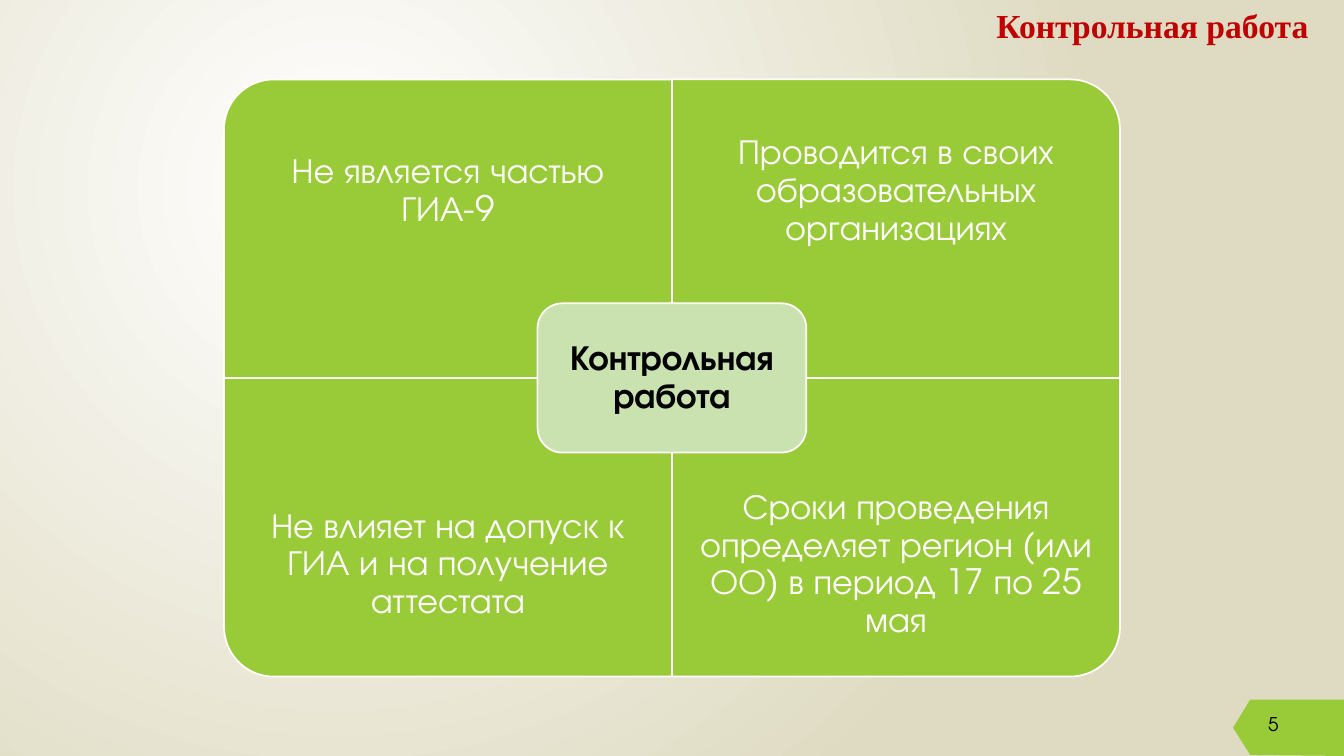
from lxml.etree import SubElement
from pptx import Presentation
from pptx.dml.color import RGBColor
from pptx.enum.shapes import MSO_SHAPE
from pptx.enum.text import MSO_ANCHOR, MSO_AUTO_SIZE, PP_ALIGN
from pptx.oxml.ns import qn
from pptx.util import Inches, Pt

GREEN = RGBColor(0x99, 0xCB, 0x38)
PALE = RGBColor(0xCA, 0xE2, 0xAF)
WHITE = RGBColor(0xFF, 0xFF, 0xFF)
BLACK = RGBColor(0, 0, 0)
RED = RGBColor(0xC0, 0, 0)
SAND = RGBColor(0xDF, 0xDB, 0xC2)

# Slide size and the two-by-two grid centred on it
WIDE, HIGH = Inches(13.33), Inches(7.5)
COL = WIDE / 3
ROW = COL * 2 / 3
LEFT, TOP = WIDE / 2 - COL, HIGH / 2 - ROW

SANS = "TeX Gyre Adventor"
BODY = {"name": SANS, "size": Pt(25), "bold": False}
HUB = {"name": SANS, "size": Pt(25), "bold": True}
HEAD = {"name": "Times New Roman", "size": Pt(24), "bold": True}
PAGE = {"name": SANS, "size": Pt(13.5), "bold": False}

# Text, column, row, turn that puts the round corner outside
TILES = [
    ("Не является частью ГИА-9", 0, 0, 270),
    ("Проводится в своих образовательных организациях", 1, 0, 0),
    ("Не влияет на допуск к ГИА и на получение аттестата", 0, 1, 180),
    ("Сроки проведения определяет регион (или ОО) в период 17 по 25 мая", 1, 1, 90),
]


def place(item, x, y, w, h):
    spots = {"left": x, "top": y, "width": w, "height": h}
    for name, value in spots.items():
        setattr(item, name, int(value))


def write(item, text, style, color, inset=None, align=PP_ALIGN.CENTER,
          anchor=MSO_ANCHOR.MIDDLE, pitch=0.9):
    frame = item.text_frame
    form = {"word_wrap": True, "auto_size": MSO_AUTO_SIZE.NONE,
            "vertical_anchor": anchor}
    if inset is not None:
        for side in ("left", "top", "right", "bottom"):
            form["margin_" + side] = Inches(inset)
    for name, value in form.items():
        setattr(frame, name, value)
    frame.text = text
    line = frame.paragraphs[0]
    line.alignment, line.line_spacing = align, pitch
    font = line.runs[0].font
    for name, value in style.items():
        setattr(font, name, value)
    font.color.rgb = color


def add_block(slide, kind, x, y, w, h, color, turn=0):
    # A quarter turn swaps the sides about the same centre
    mid_x, mid_y = x + w / 2, y + h / 2
    if turn % 180:
        w, h = h, w
    block = slide.shapes.add_shape(
        kind, int(mid_x - w / 2), int(mid_y - h / 2), int(w), int(h))
    block.rotation = turn
    block.shadow.inherit = False
    block.fill.solid()
    block.fill.fore_color.rgb = color
    block.line.color.rgb = WHITE
    block.line.width = Pt(1.25)
    return block


def add_text(slide, x, y, w, h, *args, **form):
    box = slide.shapes.add_textbox(int(x), int(y), int(w), int(h))
    write(box, *args, **form)


def add_tile(slide, text, col, row, turn):
    x, y = LEFT + col * COL, TOP + row * ROW
    add_block(slide, MSO_SHAPE.ROUND_1_RECTANGLE, x, y, COL, ROW, GREEN, turn)
    # Text takes the outer three quarters of the tile
    add_text(slide, x, y + row * ROW / 4, COL, ROW * 3 / 4,
             text, BODY, WHITE, inset=0.19)


def add_hub(slide):
    w, h = COL * 0.6, ROW / 2
    hub = add_block(slide, MSO_SHAPE.ROUNDED_RECTANGLE,
                    (WIDE - w) / 2, (HIGH - h) / 2, w, h, PALE)
    write(hub, "Контрольная работа", HUB, BLACK, inset=0.1)


def add_page(slide):
    points = [(12.4, 6.94), (13.33, 6.94), (13.33, 7.5),
              (12.4, 7.49), (12.23, 7.22)]
    pen = slide.shapes.build_freeform(
        *(Inches(n) for n in points[0]), scale=1.0)
    pen.add_line_segments([(Inches(x), Inches(y)) for x, y in points[1:]])
    tag = pen.convert_to_shape()
    tag.shadow.inherit = False
    tag.fill.solid()
    tag.fill.fore_color.rgb = GREEN
    tag.line.fill.background()
    add_text(slide, Inches(12.48), Inches(7.02), Inches(0.85), Inches(0.4),
             "5", PAGE, BLACK, align=PP_ALIGN.LEFT,
             anchor=MSO_ANCHOR.TOP, pitch=1.0)


def paint(slide):
    fill = slide.background.fill
    fill.gradient()
    for stop, color in zip(fill.gradient_stops, (WHITE, SAND)):
        stop.color.rgb = color
    # Swap the straight blend for a round one
    grad = next(slide.element.iter(qn("a:gradFill")))
    lin = grad.find(qn("a:lin"))
    if lin is not None:
        grad.remove(lin)
    ring = SubElement(grad, qn("a:path"), {"path": "circle"})
    SubElement(ring, qn("a:fillToRect"),
               {"l": "50000", "t": "50000", "r": "100000", "b": "100000"})


def main():
    deck = Presentation()
    deck.slide_width, deck.slide_height = WIDE, HIGH
    slide = deck.slides.add_slide(deck.slide_layouts[5])
    paint(slide)

    # Title
    title = slide.shapes.title
    place(title, Inches(9.53), 0, Inches(3.8), Inches(0.66))
    write(title, "Контрольная работа", HEAD, RED,
          anchor=MSO_ANCHOR.TOP, pitch=1.0)

    # Matrix with its centre, then the page tag
    for tile in TILES:
        add_tile(slide, *tile)
    add_hub(slide)
    add_page(slide)
    deck.save("out.pptx")


if __name__ == "__main__":
    main()
